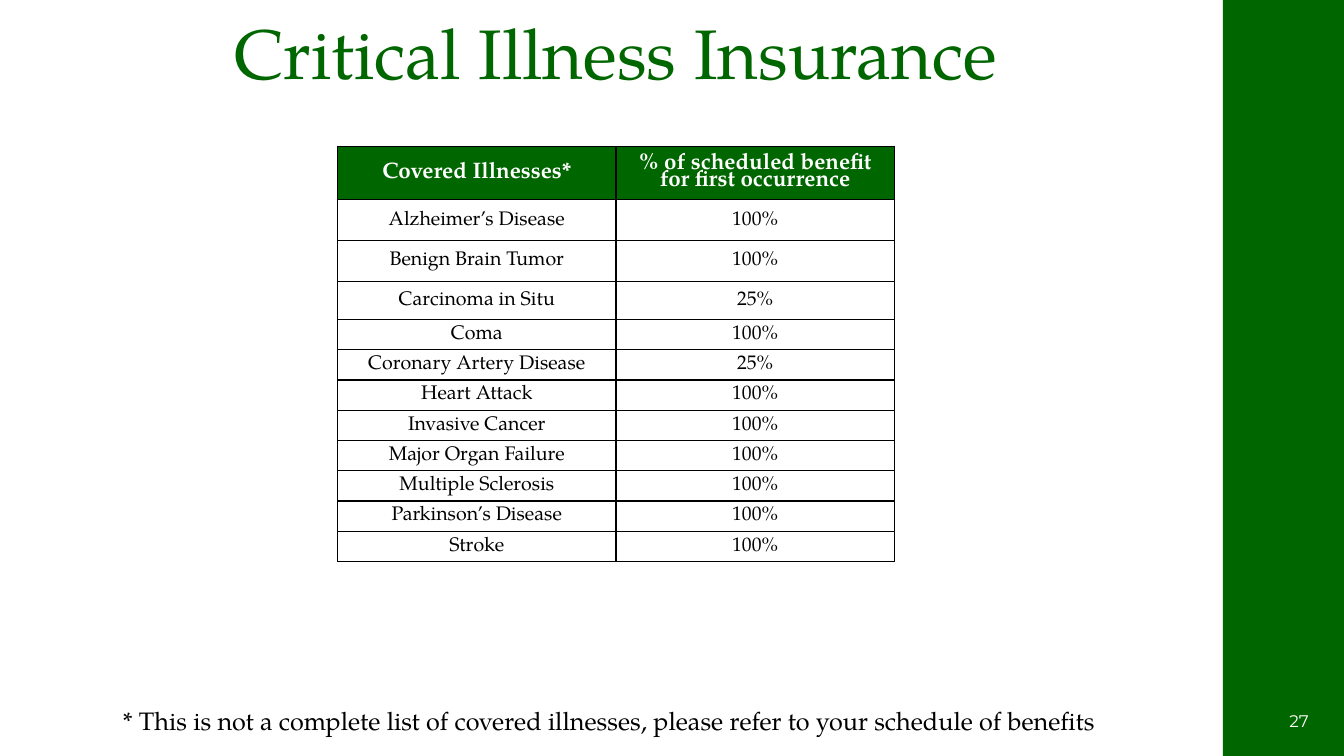
from lxml.etree import SubElement
from pptx import Presentation
from pptx.dml.color import RGBColor
from pptx.enum.shapes import MSO_SHAPE
from pptx.enum.text import MSO_ANCHOR, PP_ALIGN
from pptx.oxml.ns import qn
from pptx.util import Inches, Pt

COLORS = {"green": "006600", "white": "FFFFFF", "black": "000000"}
SERIF = "TeX Gyre Pagella"
HEADINGS = ("Covered Illnesses*", "% of scheduled benefit for first occurrence")
BENEFITS = [
    ("Alzheimer’s Disease", "100%"),
    ("Benign Brain Tumor", "100%"),
    ("Carcinoma in Situ", "25%"),
    ("Coma", "100%"),
    ("Coronary Artery Disease", "25%"),
    ("Heart Attack", "100%"),
    ("Invasive Cancer", "100%"),
    ("Major Organ Failure", "100%"),
    ("Multiple Sclerosis", "100%"),
    ("Parkinson’s Disease", "100%"),
    ("Stroke", "100%"),
]
TALL_ROWS = [0.53, 0.41, 0.4, 0.38]
ROW_HEIGHT = 0.3


def color(name):
    return RGBColor.from_string(COLORS[name])


def write(frame, text, size, ink="black", font=SERIF, bold=False,
          align=PP_ALIGN.CENTER, anchor=MSO_ANCHOR.MIDDLE, spacing=None):
    """Put one formatted paragraph in a text frame."""
    frame.word_wrap = True
    frame.vertical_anchor = anchor
    para = frame.paragraphs[0]
    para.alignment = align
    if spacing:
        para.line_spacing = spacing
    span = para.add_run()
    span.text = text
    span.font.size = Pt(size)
    span.font.name = font
    span.font.bold = bold
    span.font.color.rgb = color(ink)


def add_text(page, box, text, size, **style):
    shape = page.shapes.add_textbox(*map(Inches, box))
    write(shape.text_frame, text, size, **style)


def add_side_band(page, box):
    """Green band with the page number near its foot."""
    left, top, width, height = box
    band = page.shapes.add_shape(MSO_SHAPE.RECTANGLE, *map(Inches, box))
    band.shadow.inherit = False
    band.fill.solid()
    band.fill.fore_color.rgb = color("green")
    band.line.fill.background()
    add_text(page, (left - 0.06, top + height - 0.55, 1.01, 0.4), "27", 12,
             ink="white", font="Montserrat", align=PP_ALIGN.RIGHT)


def add_title(page, box):
    title = page.shapes.title
    title.left, title.top, title.width, title.height = map(Inches, box)
    write(title.text_frame, "Critical Illness Insurance", 50, ink="green",
          anchor=MSO_ANCHOR.TOP, spacing=0.9)


def add_borders(cell):
    properties = cell._tc.get_or_add_tcPr()
    for side in ("a:lnL", "a:lnR", "a:lnT", "a:lnB"):
        line = SubElement(properties, qn(side), w=str(Pt(1)))
        fill = SubElement(line, qn("a:solidFill"))
        SubElement(fill, qn("a:srgbClr"), val=COLORS["black"])


def add_benefit_table(page, left, top, width):
    rows = [HEADINGS] + BENEFITS
    heights = TALL_ROWS + [ROW_HEIGHT] * (len(rows) - len(TALL_ROWS))
    table = page.shapes.add_table(
        len(rows), len(HEADINGS), Inches(left), Inches(top),
        Inches(width), Inches(sum(heights))).table
    for column in table.columns:
        column.width = Inches(width / len(HEADINGS))
    for index, (texts, height) in enumerate(zip(rows, heights)):
        table.rows[index].height = Inches(height)
        header = index == 0
        for cell, text in zip(table.rows[index].cells, texts):
            add_borders(cell)
            cell.fill.solid()
            cell.fill.fore_color.rgb = color("green" if header else "white")
            cell.margin_top = cell.margin_bottom = 0
            write(cell.text_frame, text, 16 if header else 14,
                  ink="white" if header else "black", bold=header, spacing=0.8)
            cell.vertical_anchor = MSO_ANCHOR.MIDDLE


def build_slide(deck):
    page = deck.slides.add_slide(deck.slide_layouts[5])
    add_side_band(page, (12.13, 0, 1.2, 7.5))
    add_title(page, (0.6, 0.14, 11.02, 1.45))
    add_benefit_table(page, 3.35, 1.45, 5.52)
    # Footnote
    add_text(page, (1.12, 6.95, 10.11, 0.4),
             "* This is not a complete list of covered illnesses, "
             "please refer to your schedule of benefits",
             18, align=PP_ALIGN.LEFT, anchor=MSO_ANCHOR.TOP)


def main():
    deck = Presentation()
    deck.slide_width = Inches(13.33)
    deck.slide_height = Inches(7.5)
    build_slide(deck)
    deck.save("out.pptx")


if __name__ == "__main__":
    main()
